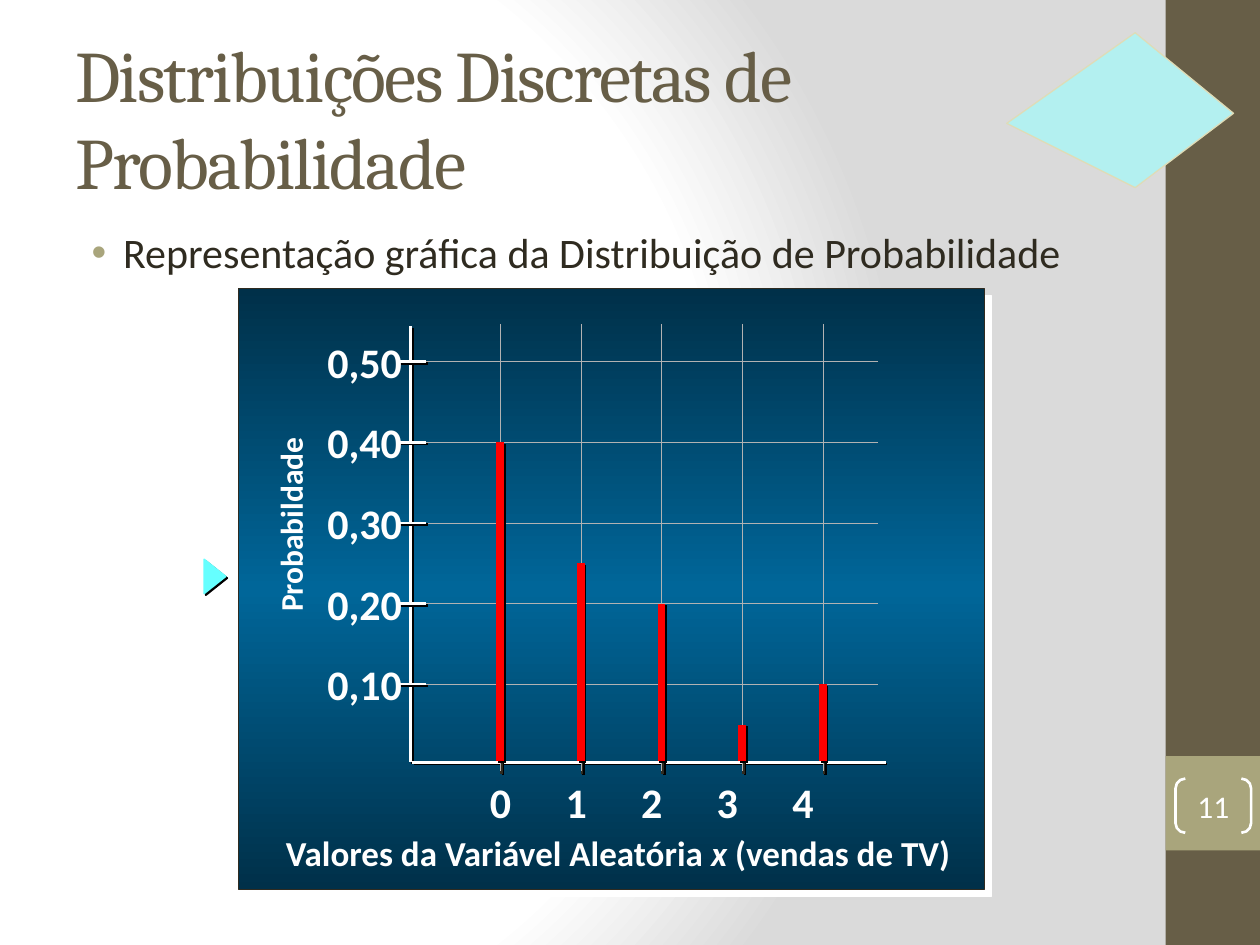
from dataclasses import dataclass

from pptx import Presentation
from pptx.dml.color import RGBColor
from pptx.enum.shapes import MSO_CONNECTOR, MSO_SHAPE
from pptx.enum.text import MSO_ANCHOR, PP_ALIGN
from pptx.oxml import parse_xml
from pptx.oxml.ns import nsdecls, qn
from pptx.util import Inches, Pt


@dataclass(frozen=True)
class Theme:
    heading: str = "Cambria"
    body: str = "Calibri"
    brown: str = "675E47"
    olive: str = "A9A57C"
    ink: str = "2F2B20"
    white: str = "FFFFFF"
    black: str = "000000"
    grey: str = "DADADA"
    grid: str = "B2B2B2"
    bar: str = "FF0000"
    cyan: str = "66FFFF"
    pale_cyan: str = "B3F0F0"
    sand: str = "DFDCB7"
    deep_blue: str = "003049"
    blue: str = "006699"
    title_size: float = 41.4
    text_size: float = 24
    caption_size: float = 20
    small_size: float = 18


def shadow_xml(color, distance):
    return parse_xml(
        f'<a:effectLst {nsdecls("a")}><a:outerShdw dist="{Pt(distance)}" dir="2700000" '
        f'algn="ctr" rotWithShape="0"><a:srgbClr val="{color}"/></a:outerShdw></a:effectLst>')


def apply_gradient(props, stops, direction):
    """Swap the solid fill in props for a gradient of (percent, colour) stops."""
    gs = "".join(f'<a:gs pos="{pos * 1000}"><a:srgbClr val="{color}"/></a:gs>'
                 for pos, color in stops)
    solid = props.find(qn("a:solidFill"))
    props.replace(solid, parse_xml(
        f'<a:gradFill {nsdecls("a")} rotWithShape="1"><a:gsLst>{gs}</a:gsLst>'
        f'{direction}</a:gradFill>'))


class Deck:
    """Draws on the current slide; lengths are in a grid of 100 columns by 75 rows."""

    def __init__(self, prs, theme):
        self.theme = theme
        self.cell = prs.slide_width / 100
        self.s = prs.slides.add_slide(prs.slide_layouts[6])

    def units(self, *cells):
        return [round(c * self.cell) for c in cells]

    def background(self, stops):
        self.s.background.fill.solid()
        apply_gradient(self.s.element.find(".//" + qn("p:bgPr")), stops,
                       '<a:path path="circle"><a:fillToRect l="20000" t="50000" '
                       'r="100000" b="50000"/></a:path>')

    def finish(self, sp, fill, line=None, width=1, shadow=None):
        sp.shadow.inherit = False
        if fill:
            sp.fill.solid()
            sp.fill.fore_color.rgb = RGBColor.from_string(fill)
        else:
            sp.fill.background()
        if line:
            sp.line.color.rgb = RGBColor.from_string(line)
            sp.line.width = Pt(width)
        else:
            sp.line.fill.background()
        if shadow:
            props = sp._element.spPr
            props.replace(props.find(qn("a:effectLst")), shadow_xml(*shadow))
        return sp

    def shape(self, kind, box, fill, **style):
        return self.finish(self.s.shapes.add_shape(kind, *self.units(*box)), fill, **style)

    def polygon(self, points, fill, **style):
        start, *rest = [self.units(*pt) for pt in points]
        builder = self.s.shapes.build_freeform(*start)
        builder.add_line_segments(rest, close=True)
        return self.finish(builder.convert_to_shape(), fill, **style)

    def line(self, x1, y1, x2, y2, color, width, shadow=True):
        ln = self.s.shapes.add_connector(MSO_CONNECTOR.STRAIGHT, *self.units(x1, y1, x2, y2))
        ln.line.color.rgb = RGBColor.from_string(color)
        ln.line.width = Pt(width)
        effect = (shadow_xml(self.theme.black, 1.4) if shadow
                  else parse_xml(f'<a:effectLst {nsdecls("a")}/>'))
        ln._element.spPr.append(effect)

    def run(self, p, text, size, color, font=None, bold=False, italic=False, shadow=False):
        r = p.add_run()
        r.text = text
        r.font.size = Pt(size)
        r.font.name = font or self.theme.body
        r.font.bold, r.font.italic = bold, italic
        r.font.color.rgb = RGBColor.from_string(color)
        if shadow:
            fill = r.font._element.find(qn("a:solidFill"))
            fill.addnext(shadow_xml(self.theme.black, 1.4))
        return r

    def text_box(self, box, wrap=True):
        sp = self.s.shapes.add_textbox(*self.units(*box))
        sp.text_frame.word_wrap = wrap
        return sp

    def chart_label(self, box, *parts, size=None, wrap=False):
        """Bold white shadowed text; each part is (text, italic)."""
        sp = self.text_box(box, wrap)
        for text, italic in parts:
            self.run(sp.text_frame.paragraphs[0], text, size or self.theme.text_size,
                     self.theme.white, bold=True, italic=italic, shadow=True)
        return sp


def draw_frame(deck):
    t = deck.theme
    deck.background([(0, t.white), (75, t.white), (100, t.grey)])
    deck.shape(MSO_SHAPE.RECTANGLE, (92.5, 0, 7.5, 75), t.brown)
    deck.shape(MSO_SHAPE.RECTANGLE, (92.5, 60, 7.5, 7.5), t.olive)

    tf = deck.text_box((5, 3, 83.3, 12.5)).text_frame
    tf.vertical_anchor = MSO_ANCHOR.MIDDLE
    r = deck.run(tf.paragraphs[0], "Distribuições Discretas de Probabilidade",
                 t.title_size, t.brown, t.heading)
    r.font._element.set("spc", "-100")

    p = deck.text_box((5, 17.5, 83.3, 52.5)).text_frame.paragraphs[0]
    deck.run(p, "Representação gráfica da Distribuição de Probabilidade", t.text_size, t.ink)
    p.space_before = Pt(0.2 * t.text_size)
    pPr = p._p.get_or_add_pPr()
    pPr.set("marL", str(Inches(0.38)))
    pPr.set("indent", str(Inches(-0.25)))
    pPr.append(parse_xml(f'<a:buClr {nsdecls("a")}><a:srgbClr val="{t.olive}"/></a:buClr>'))
    pPr.append(parse_xml(f'<a:buFont {nsdecls("a")} typeface="Arial"/>'))
    pPr.append(parse_xml(f'<a:buChar {nsdecls("a")} char="•"/>'))

    number = deck.shape(MSO_SHAPE.DOUBLE_BRACKET, (93.3, 61.8, 6, 4.3), None,
                        line=t.white, width=1.5)
    number.adjustments[0] = 0.18
    tf = number.text_frame
    tf.margin_left = tf.margin_right = tf.margin_top = tf.margin_bottom = 0
    tf.vertical_anchor = MSO_ANCHOR.MIDDLE
    tf.paragraphs[0].alignment = PP_ALIGN.CENTER
    deck.run(tf.paragraphs[0], "11", t.small_size, t.white)

    deck.polygon([(90.1, 14.9), (97.9, 9), (90.1, 2.6), (79.9, 9.8)], t.pale_cyan,
                 line=t.sand, width=0.75)


def draw_probability_chart(deck, probabilities):
    t = deck.theme
    step, base = 6.4, 60.7
    levels = [(f"0,{10 * i}", base - step * i) for i in range(1, 6)]
    columns = [39.7 + step * i for i in range(len(probabilities))]

    panel = deck.shape(MSO_SHAPE.RECTANGLE, (18.9, 22.9, 59.2, 47.7), t.blue,
                       line=t.ink, width=0.5, shadow=(t.white, 5.7))
    apply_gradient(panel._element.spPr, [(0, t.deep_blue), (50, t.blue), (100, t.deep_blue)],
                   '<a:lin ang="5400000" scaled="1"/>')

    for _, y in levels:
        deck.line(33.7, y, 69.7, y, t.grid, 0.25, shadow=False)
    deck.line(32.6, 25.9, 32.6, 60.5, t.white, 1.5)
    for label, y in levels:
        deck.line(31.5, y, 33.8, y, t.white, 1.5)
        deck.chart_label((25, y - 2.5, 8, 5), (label, False))

    values = deck.chart_label((37.9, 61.1, 27.7, 5), ("\t".join("01234"), False), wrap=True)
    stops = "".join(f'<a:tab pos="{Inches(0.6 * i)}" algn="l"/>' for i in range(1, 5))
    pPr = values.text_frame.paragraphs[0]._p.get_or_add_pPr()
    pPr.append(parse_xml(f'<a:tabLst {nsdecls("a")}>{stops}</a:tabLst>'))
    deck.chart_label((21.7, 65.5, 55.2, 4.3), ("Valores da Variável Aleatória ", False),
                     ("x", True), (" (vendas de TV)", False), size=t.caption_size)
    axis_title = deck.chart_label((15.1, 39.6, 15.9, 4), ("Probabildade", False),
                                  size=t.small_size)
    axis_title.rotation = 270

    deck.line(32.7, 60.5, 70.3, 60.5, t.white, 1.5)
    for x in columns:
        deck.line(x + 0.1, 61.4, x + 0.1, 59.8, t.ink, 1.5)
        deck.line(x, 25.7, x, 61.2, t.grid, 0.25, shadow=False)
    for x, value in zip(columns, probabilities):
        deck.line(x, 60.4, x, base - step * value * 10, t.bar, 4.5)

    pointer = deck.shape(MSO_SHAPE.ISOSCELES_TRIANGLE, (15.7, 44.9, 2.7, 1.7), t.cyan,
                         line=t.cyan, shadow=(t.black, 1.4))
    pointer.rotation = 90


def main():
    prs = Presentation()
    prs.slide_width, prs.slide_height = Inches(10), Inches(7.5)
    deck = Deck(prs, Theme())
    draw_frame(deck)
    draw_probability_chart(deck, [0.40, 0.25, 0.20, 0.05, 0.10])
    prs.save("out.pptx")


if __name__ == "__main__":
    main()
